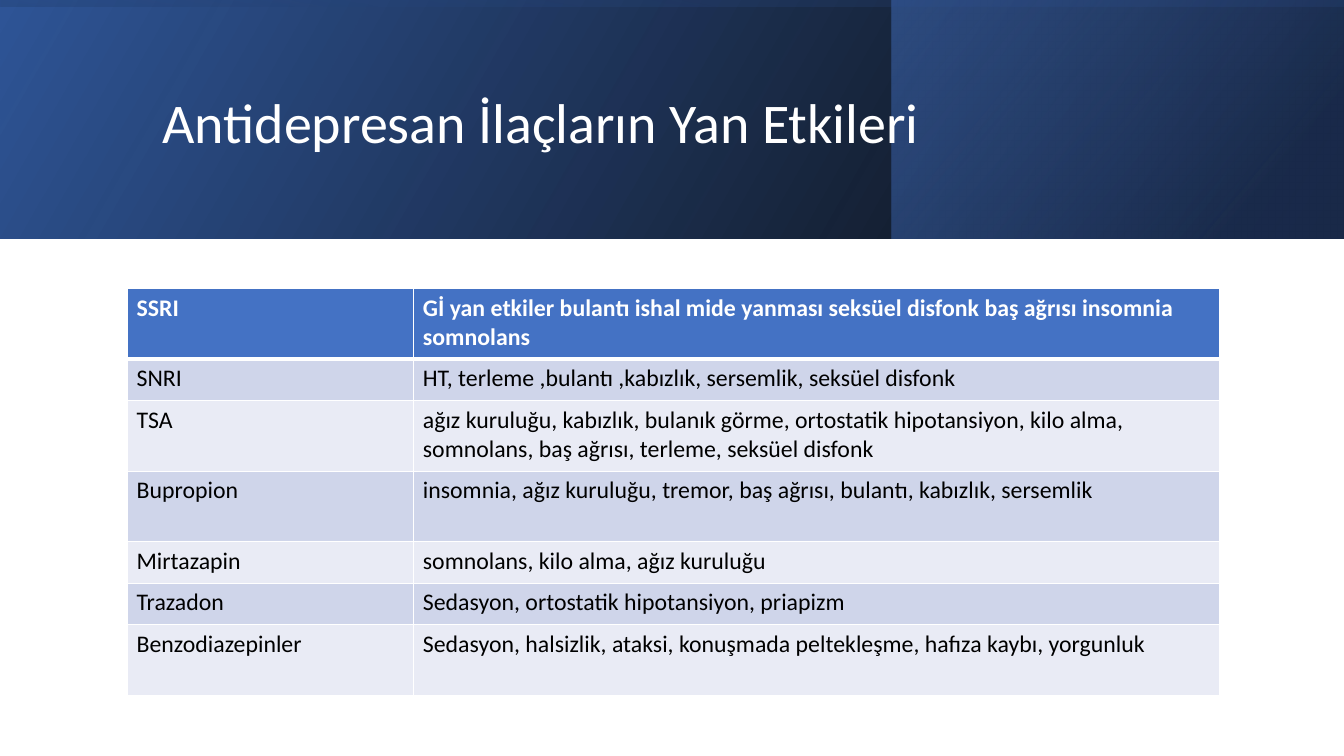
from dataclasses import dataclass

from lxml.etree import SubElement
from pptx import Presentation
from pptx.dml.color import RGBColor
from pptx.enum.shapes import MSO_SHAPE
from pptx.enum.text import MSO_ANCHOR, MSO_AUTO_SIZE, PP_ALIGN
from pptx.oxml import parse_xml
from pptx.oxml.ns import nsdecls, qn
from pptx.slide import Slide
from pptx.table import _Cell as Cell
from pptx.util import Pt

FONT = "Calibri"
WHITE = RGBColor(0xFF, 0xFF, 0xFF)
BLACK = RGBColor(0x00, 0x00, 0x00)
BLUE = RGBColor(0x44, 0x72, 0xC4)
DEEP_BLUE = RGBColor(0x2F, 0x55, 0x97)
NAVY = RGBColor(0x20, 0x38, 0x64)
BAND_DARK = RGBColor(0xCF, 0xD5, 0xEA)
BAND_LIGHT = RGBColor(0xE9, 0xEB, 0xF5)

SLIDE_W, SLIDE_H = 960, 540
BANNER_H = 170.64
ACCENT_LEFT = 636.7
SHEEN_OFFSET = (SLIDE_W - BANNER_H) / 2
COLUMN_WIDTHS = (204.5, 576)
ONE_LINE, TWO_LINES = 29.6, 50.4


@dataclass(frozen=True)
class Stop:
    position: int
    color: RGBColor
    opacity: int


@dataclass(frozen=True)
class BannerLayer:
    left: float
    top: float
    width: float
    height: float
    angle: int
    stops: tuple[Stop, ...]
    rotation: int = 0


@dataclass(frozen=True)
class DrugRow:
    drug: str
    effects: str
    height: float


BANNER = (
    BannerLayer(0, 0, SLIDE_W, BANNER_H, 330,
                (Stop(0, BLACK, 96), Stop(100, DEEP_BLUE, 100))),
    BannerLayer(ACCENT_LEFT, 0, 322.6, BANNER_H, 320,
                (Stop(19, NAVY, 68), Stop(100, BLUE, 48))),
    BannerLayer(SHEEN_OFFSET, -SHEEN_OFFSET, BANNER_H, SLIDE_W, 350,
                (Stop(23, DEEP_BLUE, 16), Stop(99, BLACK, 45)), 270),
)

DRUGS = (
    DrugRow("SSRI", "Gİ yan etkiler bulantı ishal mide yanması seksüel disfonk "
            "baş ağrısı insomnia somnolans", TWO_LINES),
    DrugRow("SNRI", "HT, terleme ,bulantı ,kabızlık, sersemlik, seksüel disfonk",
            ONE_LINE),
    DrugRow("TSA", "ağız kuruluğu, kabızlık, bulanık görme, ortostatik hipotansiyon, "
            "kilo alma, somnolans, baş ağrısı, terleme, seksüel disfonk", TWO_LINES),
    DrugRow("Bupropion", "insomnia, ağız kuruluğu, tremor, baş ağrısı, bulantı, "
            "kabızlık, sersemlik", TWO_LINES),
    DrugRow("Mirtazapin", "somnolans, kilo alma, ağız kuruluğu", ONE_LINE),
    DrugRow("Trazadon", "Sedasyon, ortostatik hipotansiyon, priapizm", ONE_LINE),
    DrugRow("Benzodiazepinler", "Sedasyon, halsizlik, ataksi, konuşmada peltekleşme, "
            "hafıza kaybı, yorgunluk", TWO_LINES),
)


def draw_layer(slide: Slide, layer: BannerLayer) -> None:
    panel = slide.shapes.add_shape(
        MSO_SHAPE.RECTANGLE, Pt(layer.left), Pt(layer.top),
        Pt(layer.width), Pt(layer.height))
    panel.rotation = layer.rotation
    panel.shadow.inherit = False
    panel.line.fill.background()
    properties = panel._element.spPr
    properties.find(qn("a:xfrm")).set("flipH", "1")
    stops = "".join(
        f'<a:gs pos="{stop.position * 1000}"><a:srgbClr val="{stop.color}">'
        f'<a:alpha val="{stop.opacity * 1000}"/></a:srgbClr></a:gs>'
        for stop in layer.stops)
    gradient = parse_xml(
        f'<a:gradFill {nsdecls("a")} rotWithShape="1"><a:gsLst>{stops}</a:gsLst>'
        f'<a:lin ang="{layer.angle * 60000}" scaled="0"/></a:gradFill>')
    properties.find(qn("a:prstGeom")).addnext(gradient)


def draw_title(slide: Slide, text: str) -> None:
    title = slide.shapes.title
    title.left, title.top = Pt(108.7), Pt(27.4)
    title.width, title.height = Pt(765.4), Pt(123.8)
    frame = title.text_frame
    frame.text = text
    frame.word_wrap = True
    frame.auto_size = MSO_AUTO_SIZE.NONE
    frame.vertical_anchor = MSO_ANCHOR.MIDDLE
    heading = frame.paragraphs[0]
    heading.alignment = PP_ALIGN.LEFT
    heading.line_spacing = 0.9
    heading.font.name = FONT
    heading.font.size = Pt(40)
    heading.font.color.rgb = WHITE
    slide.shapes._spTree.append(title._element)


def add_borders(cell: Cell, top: int, bottom: int) -> None:
    properties = cell._tc.get_or_add_tcPr()
    for side, width in (("L", 1), ("R", 1), ("T", top), ("B", bottom)):
        border = SubElement(properties, qn(f"a:ln{side}"), w=str(Pt(width)))
        fill = SubElement(border, qn("a:solidFill"))
        SubElement(fill, qn("a:srgbClr"), val=str(WHITE))


def fill_cell(cell: Cell, text: str, row: int) -> None:
    is_header = row == 0
    add_borders(cell, 3 if row == 1 else 1, 3 if is_header else 1)
    cell.fill.solid()
    band = BAND_DARK if row % 2 else BAND_LIGHT
    cell.fill.fore_color.rgb = BLUE if is_header else band
    cell.margin_left = cell.margin_right = Pt(6.6)
    cell.margin_top = cell.margin_bottom = Pt(3.4)
    cell.text = text
    entry = cell.text_frame.paragraphs[0]
    entry.font.name = FONT
    entry.font.size = Pt(17)
    entry.font.bold = is_header
    entry.font.color.rgb = WHITE if is_header else BLACK


def draw_table(slide: Slide, drugs: tuple[DrugRow, ...]) -> None:
    table = slide.shapes.add_table(
        len(drugs), len(COLUMN_WIDTHS), Pt(91), Pt(206.2),
        Pt(sum(COLUMN_WIDTHS)), Pt(sum(drug.height for drug in drugs))).table
    for column, width in zip(table.columns, COLUMN_WIDTHS):
        column.width = Pt(width)
    for row, drug in enumerate(drugs):
        table.rows[row].height = Pt(drug.height)
        for column, text in enumerate((drug.drug, drug.effects)):
            fill_cell(table.cell(row, column), text, row)


def main() -> None:
    deck = Presentation()
    deck.slide_width, deck.slide_height = Pt(SLIDE_W), Pt(SLIDE_H)
    slide = deck.slides.add_slide(deck.slide_layouts[5])
    for layer in BANNER:
        draw_layer(slide, layer)
    draw_title(slide, "Antidepresan İlaçların Yan Etkileri")
    draw_table(slide, DRUGS)
    deck.save("out.pptx")


if __name__ == "__main__":
    main()
